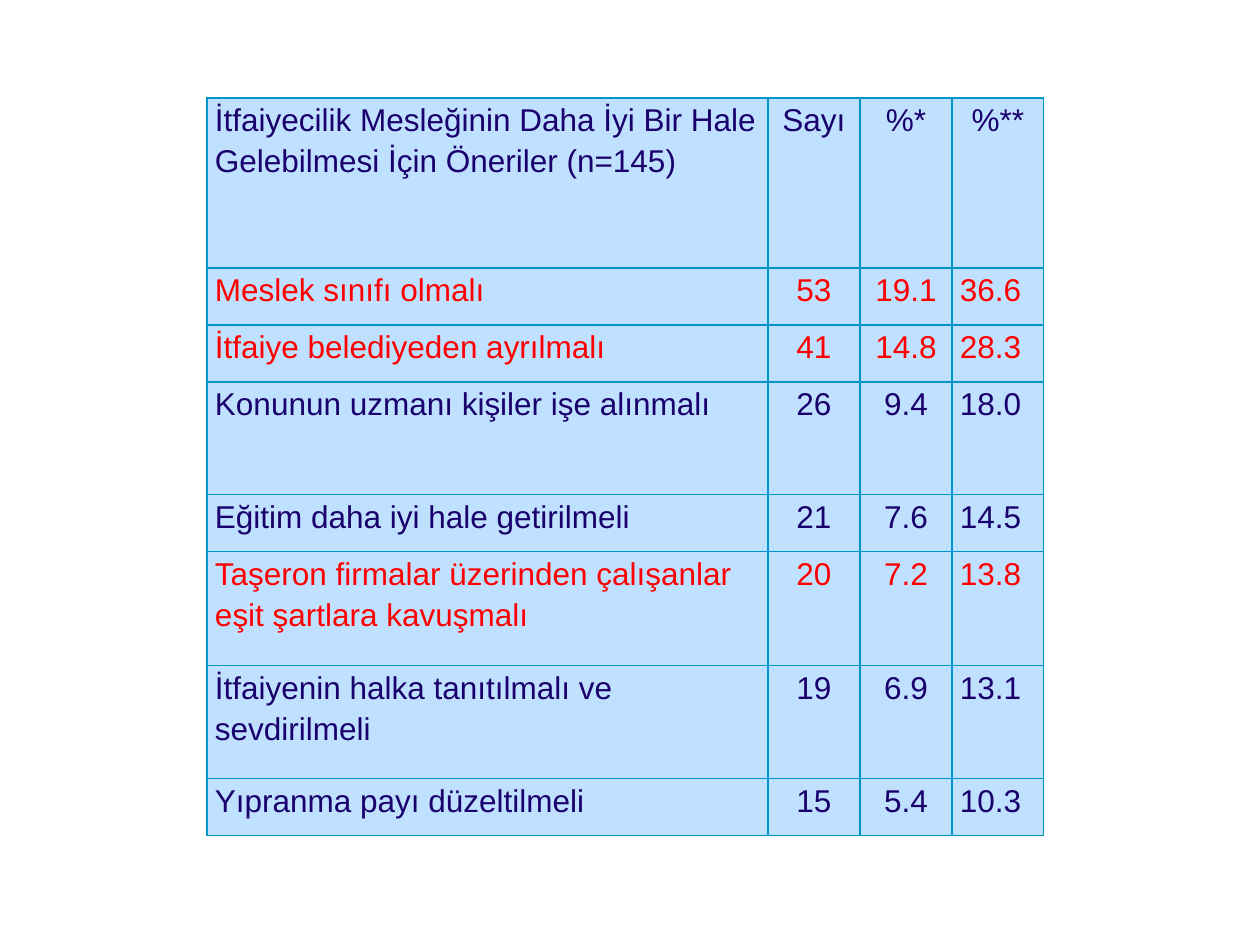
from dataclasses import dataclass

from lxml import etree
from pptx import Presentation, util as u
from pptx.dml.color import RGBColor
from pptx.enum import text
from pptx.oxml import ns

EMU_PER_PX = 914400 / 126
COLORS = {"navy": "1A006C", "red": "FF0000", "sky": "BFE1FF", "border": "0096C8"}
COLUMN_WIDTHS = [561, 92, 92, 92]
SIDE_MARGIN = 8
BORDER_WIDTH = u.Pt(0.75)


@dataclass(frozen=True)
class Suggestion:
    label: str
    count: str
    share: str
    respondents: str
    height: int = 57
    color: str = "navy"
    last_align: text.PP_ALIGN = text.PP_ALIGN.LEFT


ROWS = [
    Suggestion("İtfaiyecilik Mesleğinin Daha İyi Bir Hale Gelebilmesi İçin Öneriler (n=145)",
               "Sayı", "%*", "%**", height=170, last_align=text.PP_ALIGN.CENTER),
    Suggestion("Meslek sınıfı olmalı", "53", "19.1", "36.6", color="red"),
    Suggestion("İtfaiye belediyeden ayrılmalı", "41", "14.8", "28.3", color="red"),
    Suggestion("Konunun uzmanı kişiler işe alınmalı", "26", "9.4", "18.0", height=113),
    Suggestion("Eğitim daha iyi hale getirilmeli", "21", "7.6", "14.5"),
    Suggestion("Taşeron firmalar üzerinden çalışanlar eşit şartlara kavuşmalı",
               "20", "7.2", "13.8", height=114, color="red"),
    Suggestion("İtfaiyenin halka tanıtılmalı ve sevdirilmeli",
               "19", "6.9", "13.1", height=113),
    Suggestion("Yıpranma payı düzeltilmeli", "15", "5.4", "10.3"),
]


def px(value: int) -> int:
    return round(value * EMU_PER_PX)


def rgb(name: str) -> RGBColor:
    return RGBColor.from_string(COLORS[name])


def add_borders(cell) -> None:
    properties = cell._tc.get_or_add_tcPr()
    for side in ("lnL", "lnR", "lnT", "lnB"):
        line = etree.SubElement(properties, ns.qn(f"a:{side}"), w=str(BORDER_WIDTH))
        fill = etree.SubElement(line, ns.qn("a:solidFill"))
        etree.SubElement(fill, ns.qn("a:srgbClr"), val=COLORS["border"])


def fill_cell(cell, content: str, color: str, align: text.PP_ALIGN) -> None:
    add_borders(cell)
    cell.fill.solid()
    cell.fill.fore_color.rgb = rgb("sky")
    cell.margin_left = cell.margin_right = px(SIDE_MARGIN)
    cell.margin_top = cell.margin_bottom = 0
    cell.vertical_anchor = text.MSO_ANCHOR.TOP
    para = cell.text_frame.paragraphs[0]
    para.alignment = align
    para.line_spacing = 1.15
    span = para.add_run()
    span.text = content
    span.font.name = "Arial"
    span.font.size = u.Pt(18)
    span.font.bold = False
    span.font.color.rgb = rgb(color)


def add_suggestion_table(page, left: int, top: int) -> None:
    height = sum(row.height for row in ROWS)
    frame = page.shapes.add_table(len(ROWS), len(COLUMN_WIDTHS), px(left), px(top),
                                  px(sum(COLUMN_WIDTHS)), px(height))
    table = frame.table
    table.first_row = table.horz_banding = False
    for column, width in zip(table.columns, COLUMN_WIDTHS):
        column.width = px(width)
    center = text.PP_ALIGN.CENTER
    for index, row in enumerate(ROWS):
        table.rows[index].height = px(row.height)
        contents = (row.label, row.count, row.share, row.respondents)
        aligns = (text.PP_ALIGN.LEFT, center, center, row.last_align)
        for cell, content, align in zip(table.rows[index].cells, contents, aligns):
            fill_cell(cell, content, row.color, align)


def main() -> None:
    deck = Presentation()
    deck.slide_width, deck.slide_height = px(1260), px(945)
    page = deck.slides.add_slide(deck.slide_layouts[6])
    add_suggestion_table(page, left=207, top=98)
    deck.save("out.pptx")


if __name__ == "__main__":
    main()
